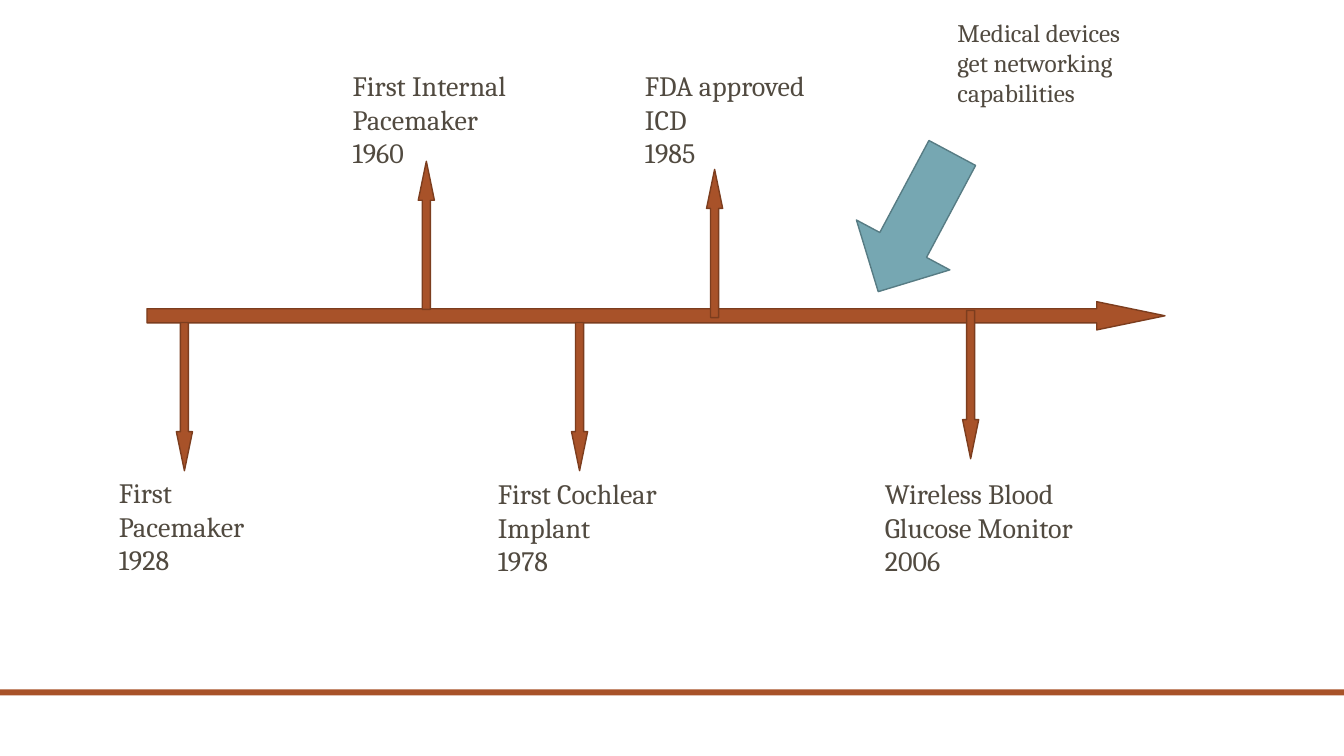
from pptx import Presentation
from pptx.dml.color import RGBColor
from pptx.enum.shapes import MSO_SHAPE as Shape
from pptx.enum.text import MSO_AUTO_SIZE as AutoSize
from pptx.util import Pt

RUST = RGBColor(0xA8, 0x52, 0x29)
DARK_RUST = RGBColor(0x7C, 0x3D, 0x1E)
TEAL = RGBColor(0x76, 0xA7, 0xB2)
DARK_TEAL = RGBColor(0x57, 0x7C, 0x84)
TEXT_COLOR = RGBColor(0x51, 0x4A, 0x40)
FONT = "Cambria"

SLIDE_WIDTH, SLIDE_HEIGHT = 960, 540
STEM_WIDTH, STEM_LENGTH = 11.52, 105.84
LABEL_HEIGHT = 80
THIN_HEAD = 2.42

# Arrow kind, left, top
STEMS = [
    (Shape.DOWN_ARROW, 126, 230.4),
    (Shape.UP_ARROW, 298.8, 115.2),
    (Shape.DOWN_ARROW, 408.24, 230.4),
    (Shape.UP_ARROW, 504.72, 121),
    (Shape.DOWN_ARROW, 687.6, 221.8),
]

# Left, top, width, lines of the event name, year
MILESTONES = [
    (77.8, 336.2, 109.4, ["First ", "Pacemaker"], "1928"),
    (244.8, 45.4, 130.3, ["First Internal", "Pacemaker"], "1960"),
    (348.5, 337, 134.6, ["First Cochlear", "Implant"], "1978"),
    (453.6, 45.4, 136.8, ["FDA approved", "ICD"], "1985"),
    (625, 337, 155.5, ["Wireless Blood", "Glucose Monitor"], "2006"),
]


def add_filled_shape(page, kind, left, top, width, height, fill, outline=None):
    shape = page.shapes.add_shape(kind, Pt(left), Pt(top), Pt(width), Pt(height))
    shape.shadow.inherit = False
    shape.fill.solid()
    shape.fill.fore_color.rgb = fill
    if outline is None:
        shape.line.fill.background()
    else:
        shape.line.color.rgb = outline
        shape.line.width = Pt(1)
    return shape


def add_thin_arrow(page, kind, left, top, width, height):
    arrow = add_filled_shape(page, kind, left, top, width, height, RUST, DARK_RUST)
    arrow.adjustments[1] = THIN_HEAD


def add_label(page, left, top, width, height, paragraphs, size):
    """Add a text box; each paragraph is a list of lines split by line breaks."""
    box = page.shapes.add_textbox(Pt(left), Pt(top), Pt(width), Pt(height))
    frame = box.text_frame
    frame.word_wrap = False
    frame.auto_size = AutoSize.SHAPE_TO_FIT_TEXT
    for number, lines in enumerate(paragraphs):
        para = frame.add_paragraph() if number else frame.paragraphs[0]
        for line_number, line in enumerate(lines):
            if line_number:
                para.add_line_break()
            span = para.add_run()
            span.text = line
            span.font.name = FONT
            span.font.size = Pt(size)
            span.font.color.rgb = TEXT_COLOR


def main():
    deck = Presentation()
    deck.slide_width, deck.slide_height = Pt(SLIDE_WIDTH), Pt(SLIDE_HEIGHT)
    page = deck.slides.add_slide(deck.slide_layouts[6])

    add_filled_shape(page, Shape.RECTANGLE, 0, 492.5, SLIDE_WIDTH, 4.3, RUST)
    add_thin_arrow(page, Shape.RIGHT_ARROW, 105, 215.5, 727.2, 20.16)
    for kind, left, top in STEMS:
        add_thin_arrow(page, kind, left, top, STEM_WIDTH, STEM_LENGTH)

    pointer = add_filled_shape(
        page, Shape.RIGHT_ARROW, 597.6, 121, 112.3, 75.6, TEAL, DARK_TEAL)
    pointer.rotation = 118.1

    for left, top, width, event, year in MILESTONES:
        add_label(page, left, top, width, LABEL_HEIGHT, [event, [year]], 20)
    networking = [["Medical devices"], ["get networking"], ["capabilities"]]
    add_label(page, 676.8, 8.6, 140.4, 72.7, networking, 18)

    deck.save("out.pptx")


if __name__ == "__main__":
    main()
